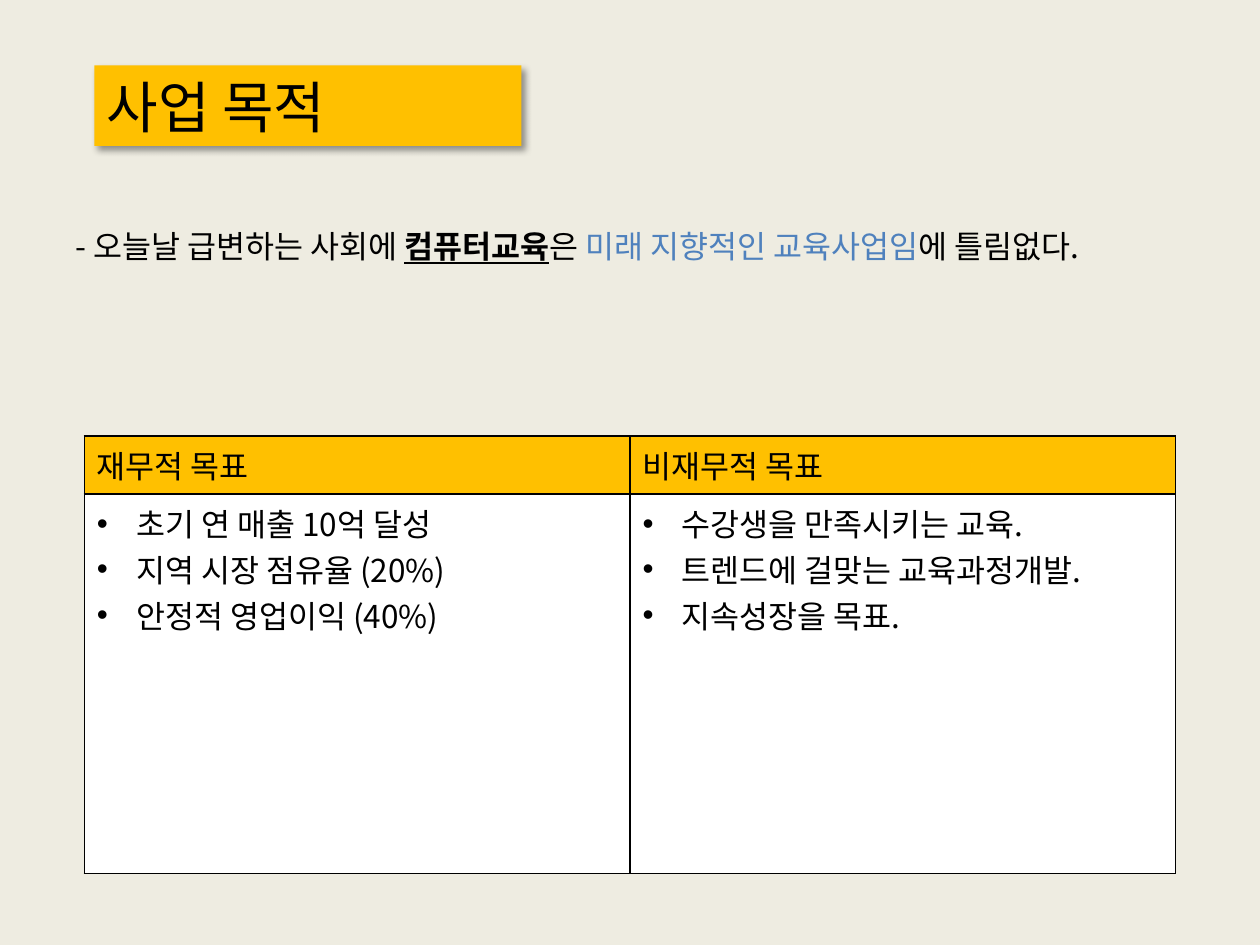
import dataclasses

import lxml.etree
import pptx
import pptx.dml.color
import pptx.enum.text
import pptx.oxml
import pptx.oxml.ns
import pptx.util

Cm = pptx.util.Cm
NS = 'xmlns:a="http://schemas.openxmlformats.org/drawingml/2006/main"'


@dataclasses.dataclass(frozen=True)
class Theme:
    """Colours, font and type sizes of the slide."""
    background: str = "EEECE1"
    banner: str = "FFC000"
    panel: str = "FFFFFF"
    ink: str = "000000"
    accent: str = "4F81BD"
    font: str = "Noto Sans CJK KR"
    title_size: int = 32
    body_size: int = 18


THEME = Theme()


def rgb(value):
    """Turn a hex string into a colour."""
    return pptx.dml.color.RGBColor.from_string(value)


def paint(fill, color):
    """Give a fill one solid colour."""
    fill.solid()
    fill.fore_color.rgb = rgb(color)


def add_run(p, text, color=THEME.ink, size=THEME.body_size, **extra):
    """Add a run in the theme font to a paragraph."""
    r = p.add_run()
    r.text = text
    formats = {"name": THEME.font, "size": pptx.util.Pt(size), "bold": False, **extra}
    for name, value in formats.items():
        setattr(r.font, name, value)
    r.font.color.rgb = rgb(color)
    ea = lxml.etree.SubElement(r.font._element, pptx.oxml.ns.qn("a:ea"))
    ea.set("typeface", THEME.font)


def add_bullet(p):
    """Give a paragraph a hanging round bullet."""
    pPr = p._p.get_or_add_pPr()
    indent = Cm(0.79)
    pPr.set("marL", str(indent))
    pPr.set("indent", str(-indent))
    pPr.append(pptx.oxml.parse_xml(f'<a:buFont {NS} typeface="Arial"/>'))
    pPr.append(pptx.oxml.parse_xml(f'<a:buChar {NS} char="•"/>'))


def add_borders(cell):
    """Draw a thin line on all four sides of a cell."""
    tcPr = cell._tc.get_or_add_tcPr()
    for side in "LRTB":
        tcPr.append(pptx.oxml.parse_xml(
            f'<a:ln{side} {NS} w="12700"><a:solidFill><a:srgbClr val="{THEME.ink}"/>'
            f'</a:solidFill></a:ln{side}>'))


def build_title(s, left, top, width, height):
    """Place the title as a banner with a soft shadow."""
    sp = s.shapes.title
    for name, value in {"left": left, "top": top, "width": width, "height": height}.items():
        setattr(sp, name, value)
    paint(sp.fill, THEME.banner)
    sp._element.spPr.append(pptx.oxml.parse_xml(
        f'<a:effectLst {NS}><a:outerShdw blurRad="50800" dist="38100" dir="2700000" '
        f'algn="tl" rotWithShape="0"><a:srgbClr val="{THEME.ink}"><a:alpha val="40000"/>'
        f'</a:srgbClr></a:outerShdw></a:effectLst>'))
    tf = sp.text_frame
    formats = {"margin_left": Cm(0.25), "margin_top": 0, "margin_bottom": 0,
               "word_wrap": True, "auto_size": pptx.enum.text.MSO_AUTO_SIZE.NONE,
               "vertical_anchor": pptx.enum.text.MSO_ANCHOR.MIDDLE}
    for name, value in formats.items():
        setattr(tf, name, value)
    p = tf.paragraphs[0]
    p.alignment = pptx.enum.text.PP_ALIGN.LEFT
    add_run(p, "사업 목적", size=THEME.title_size)


def build_statement(s, left, top, width, height):
    """Place the purpose statement with its highlighted words."""
    tf = s.shapes.add_textbox(left, top, width, height).text_frame
    tf.word_wrap = True
    p = tf.paragraphs[0]
    add_run(p, "- 오늘날 급변하는 사회에 ")
    add_run(p, "컴퓨터교육", bold=True, underline=True)
    add_run(p, "은 ")
    add_run(p, "미래 지향적인 교육사업임", THEME.accent)
    add_run(p, "에 틀림없다.")


def build_goals(s, left, top, width, header_height, body_height):
    """Place the table of goals, one column for each kind."""
    goals = {
        "재무적 목표": ["초기 연 매출 10억 달성", "지역 시장 점유율 (20%)", "안정적 영업이익 (40%)"],
        "비재무적 목표": ["수강생을 만족시키는 교육.", "트렌드에 걸맞는 교육과정개발.",
                    "지속성장을 목표."],
    }
    table = s.shapes.add_table(2, len(goals), left, top, width,
                               header_height + body_height).table
    table.rows[0].height = header_height
    table.rows[1].height = body_height
    for col, (heading, items) in enumerate(goals.items()):
        header, body = table.cell(0, col), table.cell(1, col)
        for cell, color in ((header, THEME.banner), (body, THEME.panel)):
            add_borders(cell)
            paint(cell.fill, color)
        add_run(header.text_frame.paragraphs[0], heading)
        tf = body.text_frame
        for i, item in enumerate(items):
            p = tf.add_paragraph() if i else tf.paragraphs[0]
            add_bullet(p)
            add_run(p, item)


def main():
    """Build the slide and save it."""
    prs = pptx.Presentation()
    prs.slide_width, prs.slide_height = Cm(25.4), Cm(19.05)
    s = prs.slides.add_slide(prs.slide_layouts[5])
    paint(s.background.fill, THEME.background)
    build_statement(s, Cm(1.27), Cm(4.45), Cm(22.43), Cm(4.29))
    build_goals(s, Cm(1.7), Cm(8.79), Cm(22), Cm(1.17), Cm(7.65))
    build_title(s, Cm(1.9), Cm(1.32), Cm(8.61), Cm(1.62))
    prs.save("out.pptx")


if __name__ == "__main__":
    main()
